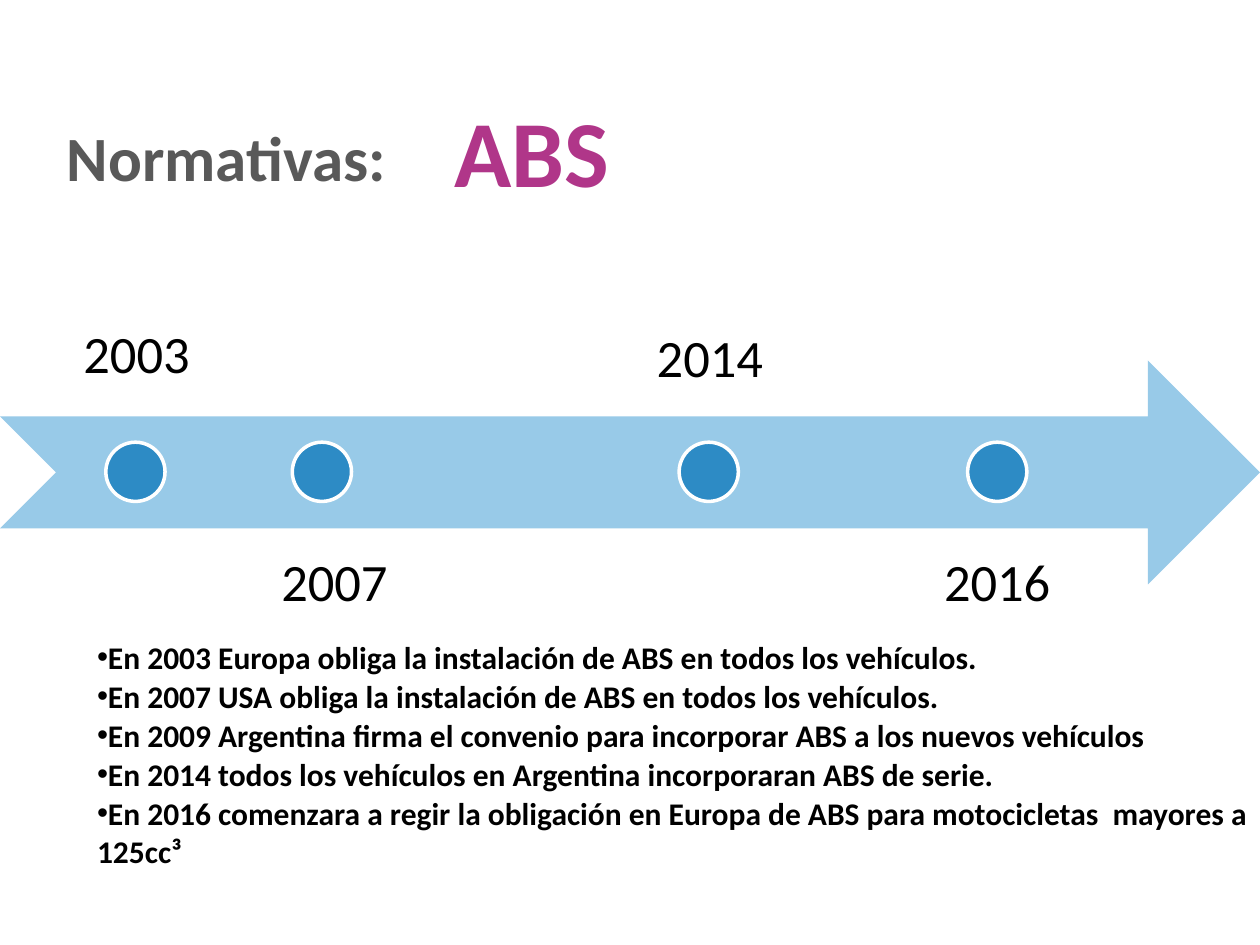
from dataclasses import dataclass

from lxml.etree import SubElement
from pptx import Presentation
from pptx.dml.color import RGBColor
from pptx.enum.shapes import MSO_SHAPE
from pptx.enum.text import MSO_ANCHOR, MSO_AUTO_SIZE, PP_ALIGN
from pptx.oxml.ns import qn
from pptx.util import Pt


@dataclass(frozen=True)
class Theme:
    font: str = "Calibri"
    ink: str = "000000"
    gray: str = "595959"
    pink: str = "B03689"
    sky: str = "98CAE8"
    blue: str = "2D8BC5"
    white: str = "FFFFFF"
    head: int = 36
    mark: int = 54
    year: int = 30
    body: int = 18


THEME = Theme()
DOT = 33.84
DOT_TOP = 252.72

YEARS = [
    ("2003", 60.48, 0, 146.16, 90, MSO_ANCHOR.BOTTOM),
    ("2007", 167.04, 113.04, 301.68, 128.16, MSO_ANCHOR.TOP),
    ("2014", 388.08, 327.6, 110.16, 128.16, MSO_ANCHOR.BOTTOM),
    ("2016", 552.96, 491.76, 301.68, 128.16, MSO_ANCHOR.TOP),
]

RULES = [
    "En 2003 Europa obliga la instalación de ABS en todos los vehículos.",
    "En 2007 USA obliga la instalación de ABS en todos los vehículos.",
    "En 2009 Argentina firma el convenio para incorporar ABS a los nuevos vehículos",
    "En 2014 todos los vehículos en Argentina incorporaran ABS de serie.",
    "En 2016 comenzara a regir la obligación en Europa de ABS para motocicletas  mayores a 125cc³",
]


def place(shape, left, top, width, height):
    shape.left, shape.top = Pt(left), Pt(top)
    shape.width, shape.height = Pt(width), Pt(height)


def write(para, text, size=THEME.body, color=THEME.ink, bold=False,
          align=PP_ALIGN.LEFT, before=0, line=1.0, bullet=None):
    para.alignment = align
    para.space_before = Pt(before)
    para.line_spacing = line
    if bullet:
        props = para._p.get_or_add_pPr()
        props.set("marL", "0")
        props.set("indent", "0")
        SubElement(props, qn("a:buFont"), typeface="Arial")
        SubElement(props, qn("a:buChar"), char=bullet)
    run = para.add_run()
    run.text = text
    run.font.name = THEME.font
    run.font.size = Pt(size)
    run.font.bold = bold
    run.font.color.rgb = RGBColor.from_string(color)


def add_shape(slide, kind, box, fill, line=None):
    shape = slide.shapes.add_shape(kind, *map(Pt, box))
    shape.shadow.inherit = False
    shape.fill.solid()
    shape.fill.fore_color.rgb = RGBColor.from_string(fill)
    if line:
        shape.line.color.rgb = RGBColor.from_string(line)
        shape.line.width = Pt(2)
    else:
        shape.line.fill.background()


def add_label(slide, text, box, anchor=MSO_ANCHOR.TOP, inset=None, **style):
    frame = slide.shapes.add_textbox(*map(Pt, box)).text_frame
    frame.word_wrap = True
    frame.vertical_anchor = anchor
    if inset is not None:
        frame.margin_left = frame.margin_right = Pt(inset)
        frame.margin_top = frame.margin_bottom = Pt(inset)
    write(frame.paragraphs[0], text, align=PP_ALIGN.CENTER, **style)


def add_title(slide):
    title = slide.shapes.title
    place(title, 31, 66.24, 294.5, 46)
    frame = title.text_frame
    frame.auto_size = MSO_AUTO_SIZE.NONE
    frame.vertical_anchor = MSO_ANCHOR.MIDDLE
    write(frame.paragraphs[0], "Normativas:", size=THEME.head,
          color=THEME.gray, bold=True)
    add_label(slide, "ABS", (252, 49.68, 103.68, 72.72), size=THEME.mark,
              color=THEME.pink, bold=True)


def add_timeline(slide):
    add_shape(slide, MSO_SHAPE.NOTCHED_RIGHT_ARROW, (0, 206, 720, 128),
              THEME.sky)
    for year, dot, left, top, height, anchor in YEARS:
        add_shape(slide, MSO_SHAPE.OVAL, (dot, DOT_TOP, DOT, DOT),
                  THEME.blue, THEME.white)
        add_label(slide, year, (left, top, 156.24, height), anchor,
                  inset=16.56, size=THEME.year, line=0.9)


def add_rules(slide):
    body = slide.placeholders[1]
    place(body, 48.24, 360.72, 689, 142)
    frame = body.text_frame
    frame.auto_size = MSO_AUTO_SIZE.NONE
    for index, rule in enumerate(RULES):
        para = frame.add_paragraph() if index else frame.paragraphs[0]
        write(para, rule, bold=True, before=0.75 if index else 0, bullet="•")


def main():
    deck = Presentation()
    deck.slide_width, deck.slide_height = Pt(720), Pt(540)
    slide = deck.slides.add_slide(deck.slide_layouts[1])
    add_timeline(slide)
    add_rules(slide)
    add_title(slide)
    deck.save("out.pptx")


if __name__ == "__main__":
    main()
